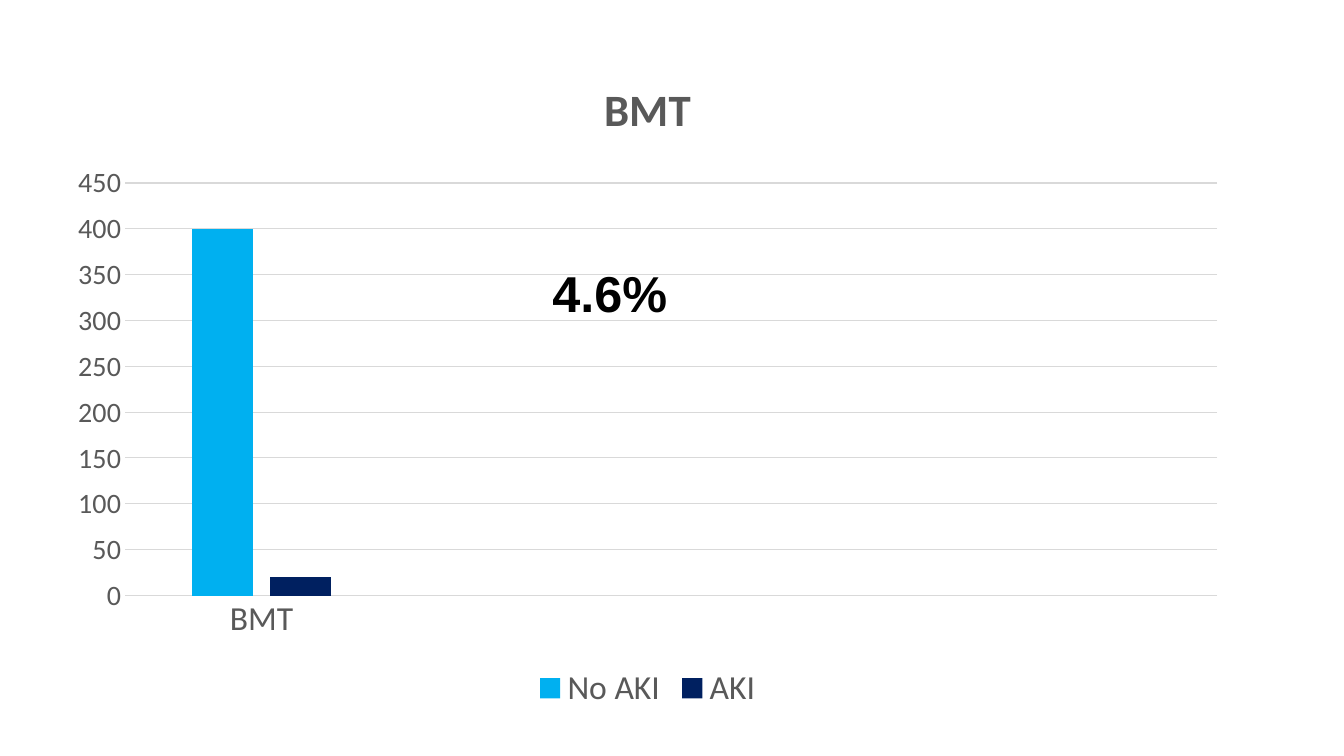
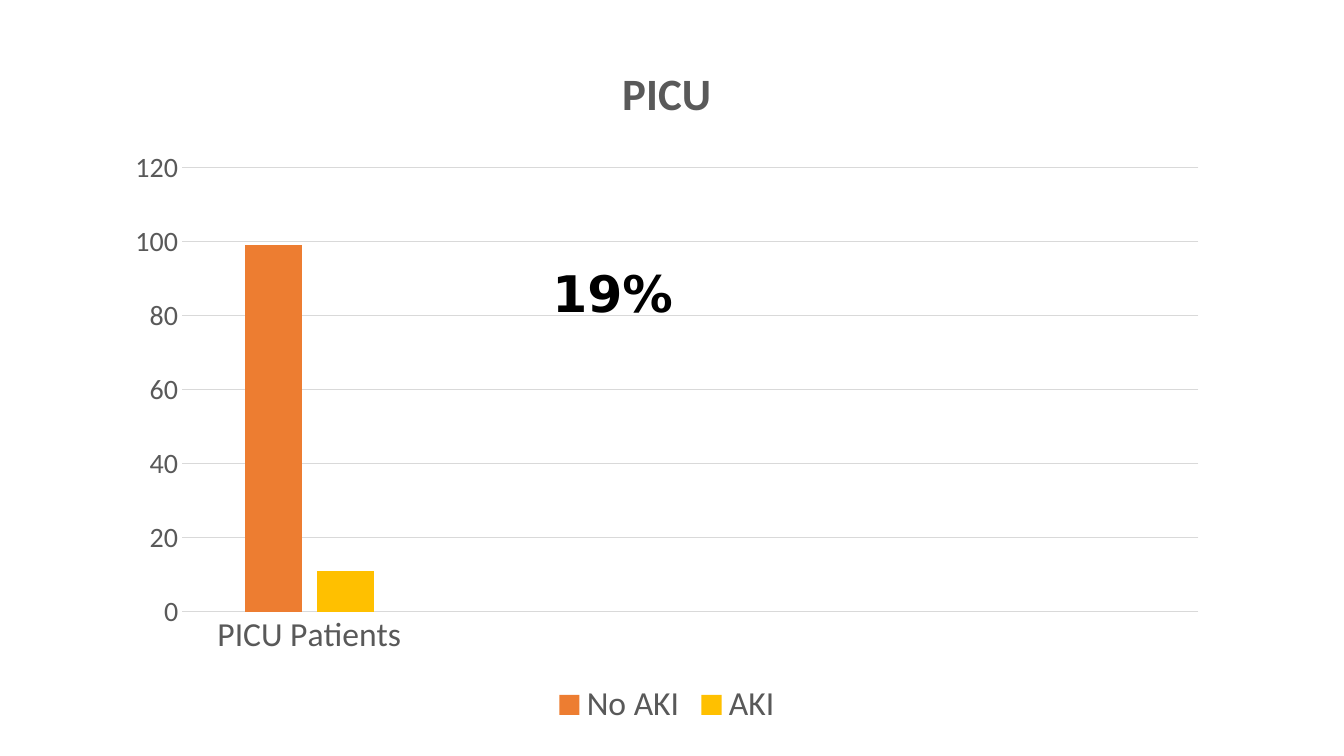
from pptx import Presentation
from pptx.chart.data import CategoryChartData
from pptx.dml.color import RGBColor
from pptx.enum.chart import XL_CHART_TYPE, XL_LEGEND_POSITION, XL_TICK_MARK
from pptx.enum.text import MSO_AUTO_SIZE
from pptx.util import Cm, Pt

COLOURS = {
    "text": "595959",
    "rule": "D9D9D9",
    "rate": "000000",
    "sky": "00B0F0",
    "navy": "002060",
    "orange": "ED7D31",
    "gold": "FFC000",
}
CHART_FONT = "Calibri"
CATEGORY_SLOTS = 4
RATE_BOX = (13.67, 6.48, 5.5, 1.8)

UNITS = [
    {
        "title": "BMT",
        "category": "BMT",
        "box": (1.37, 1.29, 29.9, 16.74),
        "series": [("No AKI", 400, "sky"), ("AKI", 20, "navy")],
        "scale": {"minimum_scale": 0, "maximum_scale": 450, "major_unit": 50},
        "rate": "4.6%",
        "rate_font": "Arial",
    },
    {
        "title": "PICU",
        "category": "PICU Patients",
        "box": (2.85, 0.87, 27.91, 17.58),
        "series": [("No AKI", 99, "orange"), ("AKI", 11, "gold")],
        "scale": {"minimum_scale": 0, "maximum_scale": 120, "major_unit": 20},
        "rate": "19%",
        "rate_font": "DejaVu Sans",
    },
]


def set_attributes(target, values):
    """Set every named value on the target."""
    for name, value in values.items():
        setattr(target, name, value)


def colour(name):
    """Return the named colour."""
    return RGBColor.from_string(COLOURS[name])


def style_font(font, size, colour_name="text", name=CHART_FONT, bold=False):
    """Give a font its size, colour, face and weight."""
    set_attributes(font, {"size": Pt(size), "name": name, "bold": bold})
    font.color.rgb = colour(colour_name)


def style_rule(line):
    """Draw an axis or grid line as a thin grey rule."""
    line.color.rgb = colour("rule")
    line.width = Pt(0.75)


def style_axes(chart, scale):
    """Style both axes and fix the value scale."""
    for axis, size in ((chart.category_axis, 24), (chart.value_axis, 20)):
        set_attributes(axis, {"major_tick_mark": XL_TICK_MARK.NONE,
                              "minor_tick_mark": XL_TICK_MARK.NONE})
        style_font(axis.tick_labels.font, size)
    style_rule(chart.category_axis.format.line)
    style_rule(chart.value_axis.major_gridlines.format.line)
    chart.value_axis.format.line.fill.background()
    set_attributes(chart.value_axis, scale)


def add_column_chart(slide, unit):
    """Add the clustered columns of one unit in its box."""
    data = CategoryChartData()
    data.categories = [unit["category"]] + [""] * (CATEGORY_SLOTS - 1)
    for name, value, _ in unit["series"]:
        data.add_series(name, [value] + [None] * (CATEGORY_SLOTS - 1))
    chart = slide.shapes.add_chart(
        XL_CHART_TYPE.COLUMN_CLUSTERED, *map(Cm, unit["box"]), data).chart
    style_font(chart.font, 10)

    title = chart.chart_title.text_frame
    title.text = unit["title"]
    style_font(title.paragraphs[0].runs[0].font, 32, bold=True)
    chart.chart_title.include_in_layout = False

    chart.has_legend = True
    set_attributes(chart.legend, {"position": XL_LEGEND_POSITION.BOTTOM,
                                  "include_in_layout": False})
    style_font(chart.legend.font, 24)
    style_axes(chart, unit["scale"])

    plot = chart.plots[0]
    set_attributes(plot, {"gap_width": 219, "overlap": -27, "vary_by_categories": False})
    for series, (_, _, colour_name) in zip(plot.series, unit["series"]):
        series.format.fill.solid()
        series.format.fill.fore_color.rgb = colour(colour_name)


def add_rate(slide, text, font_name, box):
    """Add the bold rate over the chart."""
    frame = slide.shapes.add_textbox(*map(Cm, box)).text_frame
    set_attributes(frame, {"word_wrap": True, "auto_size": MSO_AUTO_SIZE.SHAPE_TO_FIT_TEXT})
    run = frame.paragraphs[0].add_run()
    run.text = text
    style_font(run.font, 36, "rate", font_name, bold=True)


def add_unit_slide(presentation, unit):
    """Add one slide with a unit's chart and rate."""
    slide = presentation.slides.add_slide(presentation.slide_layouts[6])
    add_column_chart(slide, unit)
    add_rate(slide, unit["rate"], unit["rate_font"], RATE_BOX)


def main():
    """Build and save the presentation."""
    presentation = Presentation()
    set_attributes(presentation, {"slide_width": Cm(33.87), "slide_height": Cm(19.05)})
    for unit in UNITS:
        add_unit_slide(presentation, unit)
    presentation.save("out.pptx")


if __name__ == "__main__":
    main()
